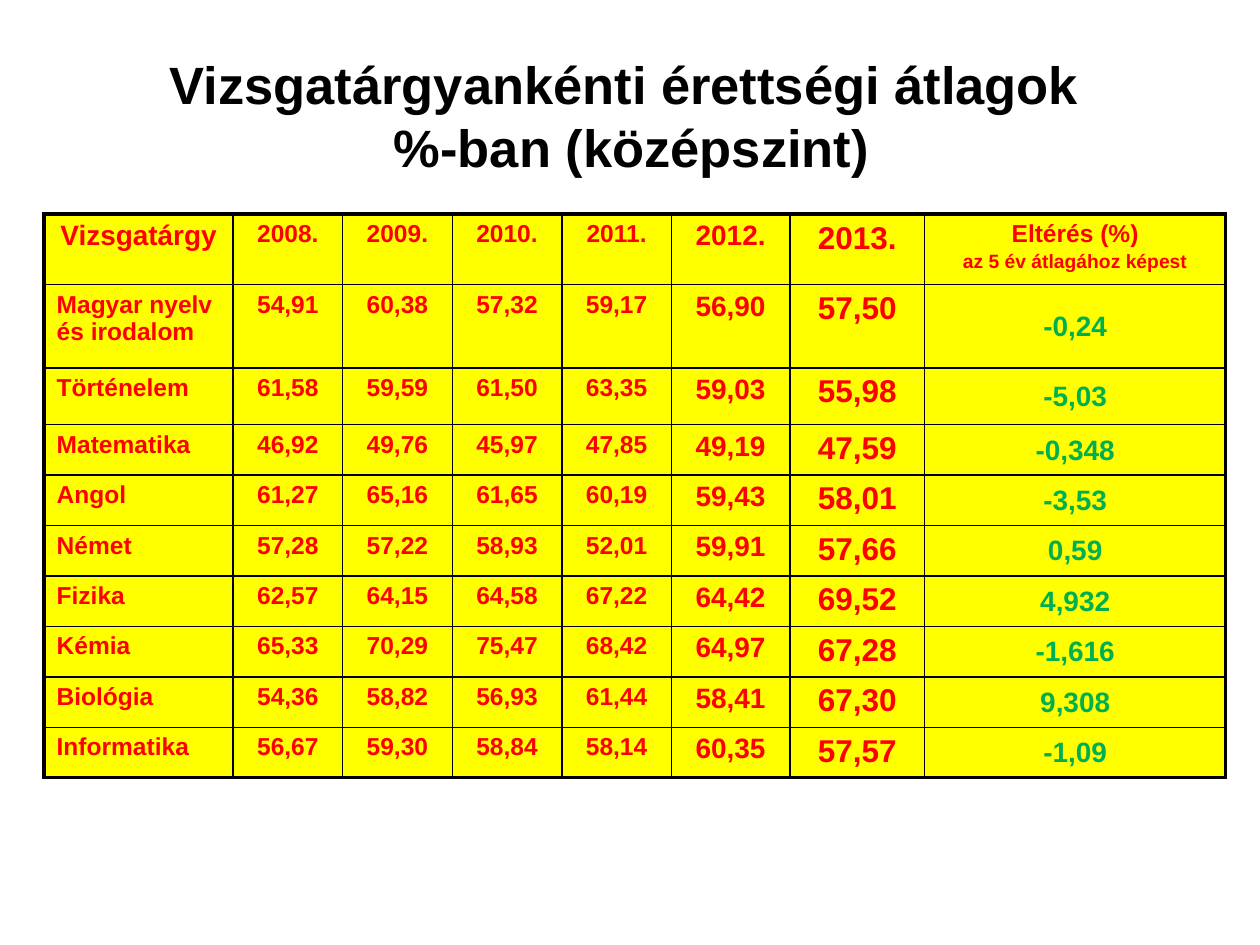
from pptx import Presentation
from pptx.dml.color import RGBColor
from pptx.enum.text import MSO_ANCHOR, PP_ALIGN
from pptx.oxml.ns import qn
from pptx.util import Inches, Pt
from lxml import etree

LEFT, CENTER = PP_ALIGN.LEFT, PP_ALIGN.CENTER
MIDDLE = MSO_ANCHOR.MIDDLE
BLACK = RGBColor(0x00, 0x00, 0x00)
RED = RGBColor(0xFF, 0x00, 0x00)
GREEN = RGBColor(0x00, 0xB0, 0x50)
YELLOW = RGBColor(0xFF, 0xFF, 0x00)
FONT = "Arial"
OUTER, INNER = 2.25, 1  # border widths in points

TITLE_LINES = ["Vizsgatárgyankénti érettségi átlagok", " %-ban (középszint)"]
HEADER = ["Vizsgatárgy", "2008.", "2009.", "2010.", "2011.", "2012.", "2013.", "Eltérés (%)"]
HEADER_NOTE = "az 5 év átlagához képest"
RESULTS = [
    ["Magyar nyelv és irodalom", "54,91", "60,38", "57,32", "59,17", "56,90", "57,50", "-0,24"],
    ["Történelem", "61,58", "59,59", "61,50", "63,35", "59,03", "55,98", "-5,03"],
    ["Matematika", "46,92", "49,76", "45,97", "47,85", "49,19", "47,59", "-0,348"],
    ["Angol", "61,27", "65,16", "61,65", "60,19", "59,43", "58,01", "-3,53"],
    ["Német", "57,28", "57,22", "58,93", "52,01", "59,91", "57,66", "0,59"],
    ["Fizika", "62,57", "64,15", "64,58", "67,22", "64,42", "69,52", "4,932"],
    ["Kémia", "65,33", "70,29", "75,47", "68,42", "64,97", "67,28", "-1,616"],
    ["Biológia", "54,36", "58,82", "56,93", "61,44", "58,41", "67,30", "9,308"],
    ["Informatika", "56,67", "59,30", "58,84", "58,14", "60,35", "57,57", "-1,09"],
]
COLUMN_WIDTHS = [1.5] + [0.87] * 4 + [0.94, 1.07, 2.39]
ROW_HEIGHTS = [0.56, 0.66, 0.45] + [0.38] * 7
HEADER_SIZES = [16, 14, 14, 14, 14, 16, 18, 14]
RESULT_SIZES = [14, 14, 14, 14, 14, 16, 18, 16]


def add_run(paragraph, text, size, color):
    run = paragraph.add_run()
    run.text = text
    run.font.name = FONT
    run.font.size = Pt(size)
    run.font.bold = True
    run.font.color.rgb = color


def add_title(slide, left, top, width, height):
    frame = slide.shapes.add_textbox(left, top, width, height).text_frame
    frame.word_wrap = True
    frame.vertical_anchor = MIDDLE
    paragraph = frame.paragraphs[0]
    paragraph.alignment = CENTER
    for index, line in enumerate(TITLE_LINES):
        if index:
            paragraph.add_line_break()
        add_run(paragraph, line, 30, BLACK)


def set_borders(cell, widths):
    properties = cell._tc.get_or_add_tcPr()
    for side, width in widths.items():
        line = etree.SubElement(properties, qn(f"a:ln{side}"), w=str(Pt(width)))
        fill = etree.SubElement(line, qn("a:solidFill"))
        etree.SubElement(fill, qn("a:srgbClr"), val=str(BLACK))


def fill_cell(cell, text, row, column):
    last_row, last_column = len(RESULTS), len(HEADER) - 1
    set_borders(cell, {
        "L": INNER if column else OUTER,
        "R": OUTER if column == last_column else INNER,
        "T": INNER if row else OUTER,
        "B": OUTER if row == last_row else INNER,
    })
    cell.fill.solid()
    cell.fill.fore_color.rgb = YELLOW

    is_difference = row > 0 and column == last_column
    if is_difference:
        cell.vertical_anchor = MIDDLE
        cell.margin_left = cell.margin_right = cell.margin_top = Inches(0.01)
        cell.margin_bottom = 0
    paragraph = cell.text_frame.paragraphs[0]
    paragraph.alignment = LEFT if row and not column else CENTER
    size = (RESULT_SIZES if row else HEADER_SIZES)[column]
    add_run(paragraph, text, size, GREEN if is_difference else RED)


def add_results_table(slide, left, top, width, height):
    rows = [HEADER] + RESULTS
    table = slide.shapes.add_table(len(rows), len(HEADER), left, top, width, height).table
    table.first_row = table.horz_banding = False

    # Columns and rows share the box in proportion
    for column, share in zip(table.columns, COLUMN_WIDTHS):
        column.width = int(width * share / sum(COLUMN_WIDTHS))
    for row, share in zip(table.rows, ROW_HEIGHTS):
        row.height = int(height * share / sum(ROW_HEIGHTS))

    for r, texts in enumerate(rows):
        for c, text in enumerate(texts):
            fill_cell(table.cell(r, c), text, r, c)

    # Small second line of the last heading
    note = table.cell(0, len(HEADER) - 1).text_frame.add_paragraph()
    note.alignment = CENTER
    note.space_before = Pt(2)
    add_run(note, HEADER_NOTE, 11, RED)


def main():
    presentation = Presentation()
    presentation.slide_width = Inches(10)
    presentation.slide_height = Inches(7.5)
    slide = presentation.slides.add_slide(presentation.slide_layouts[6])
    add_title(slide, Inches(0.27), Inches(0.44), Inches(9.37), Inches(0.94))
    add_results_table(slide, Inches(0.35), Inches(1.7),
                      Inches(sum(COLUMN_WIDTHS)), Inches(sum(ROW_HEIGHTS)))
    presentation.save("out.pptx")


if __name__ == "__main__":
    main()
